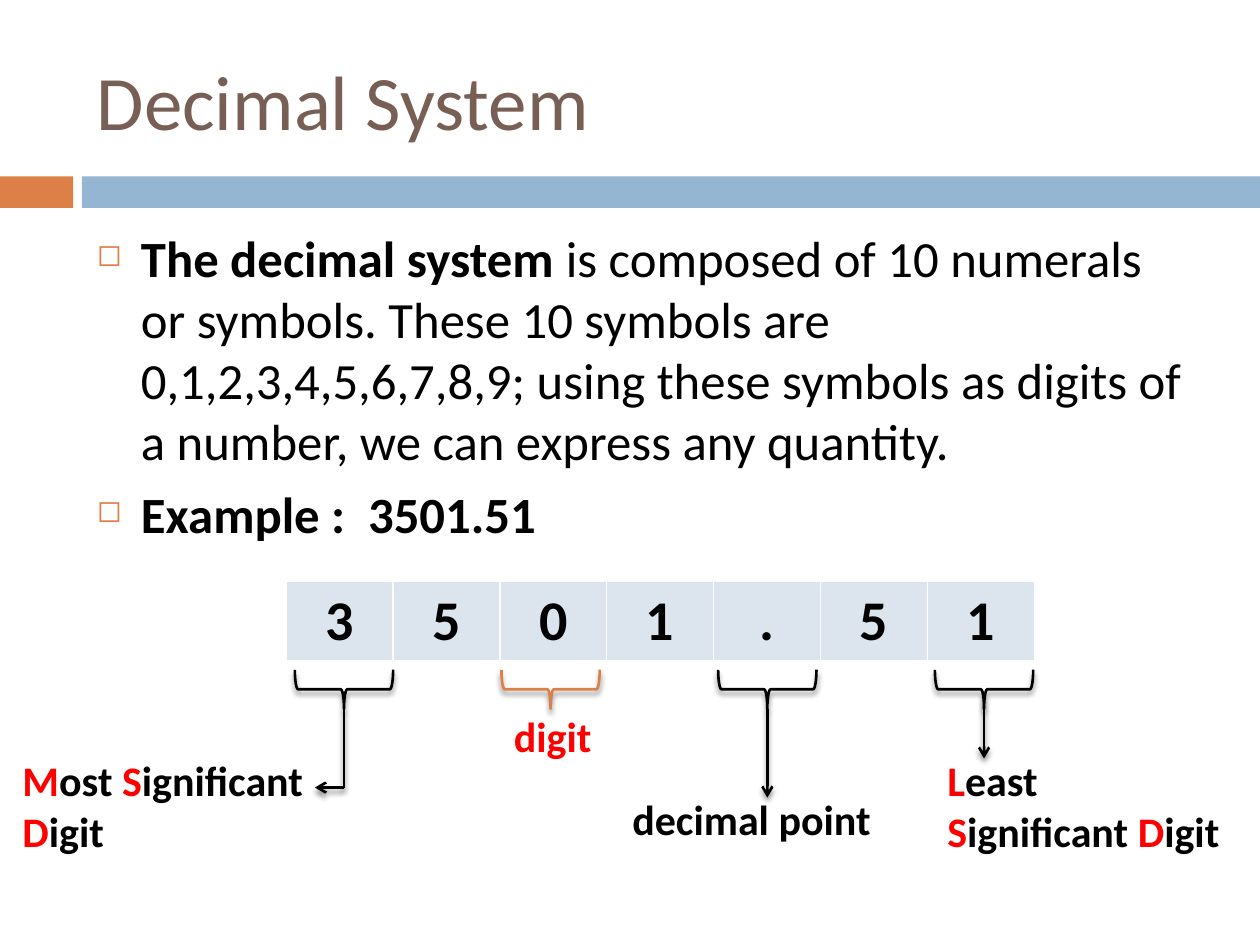
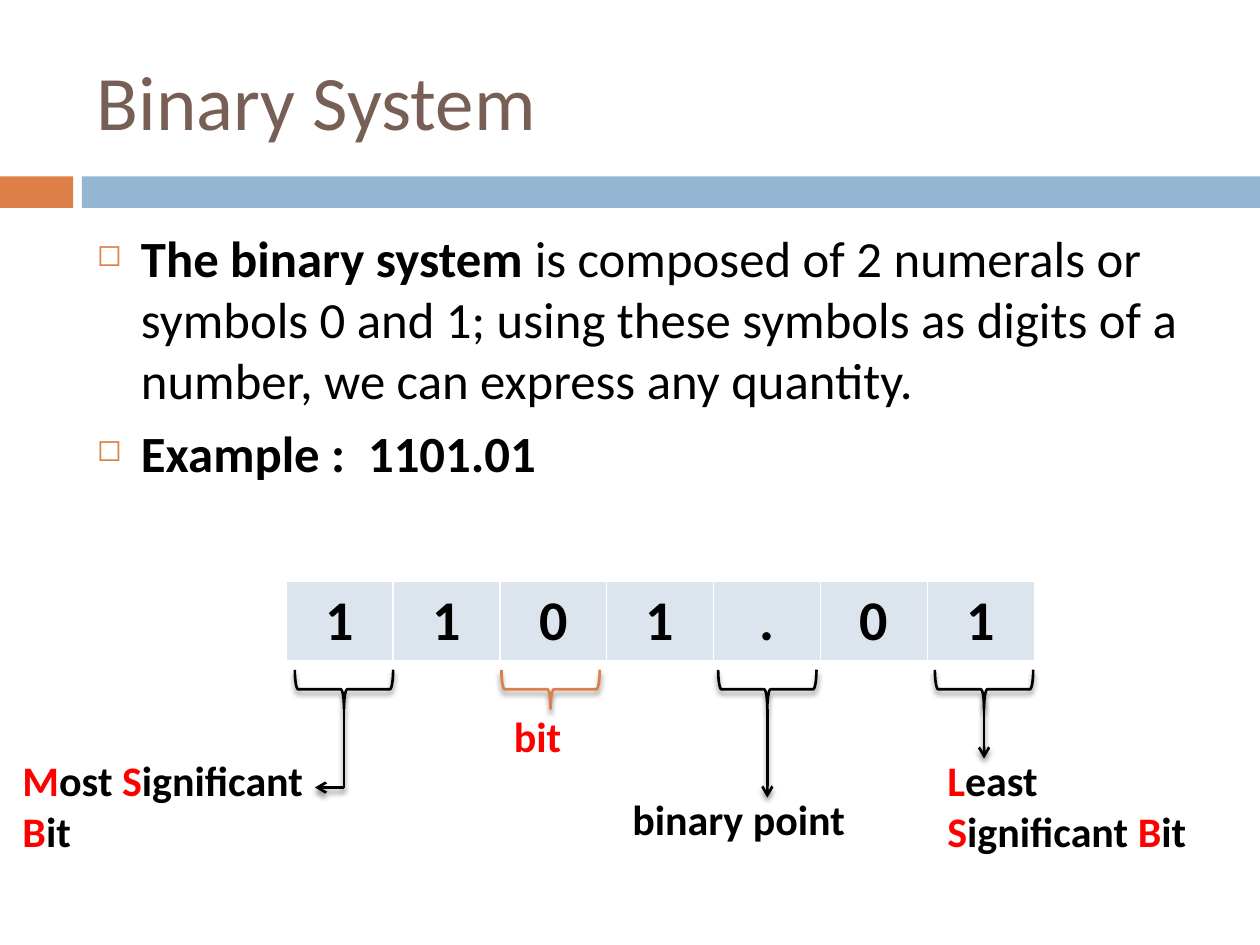
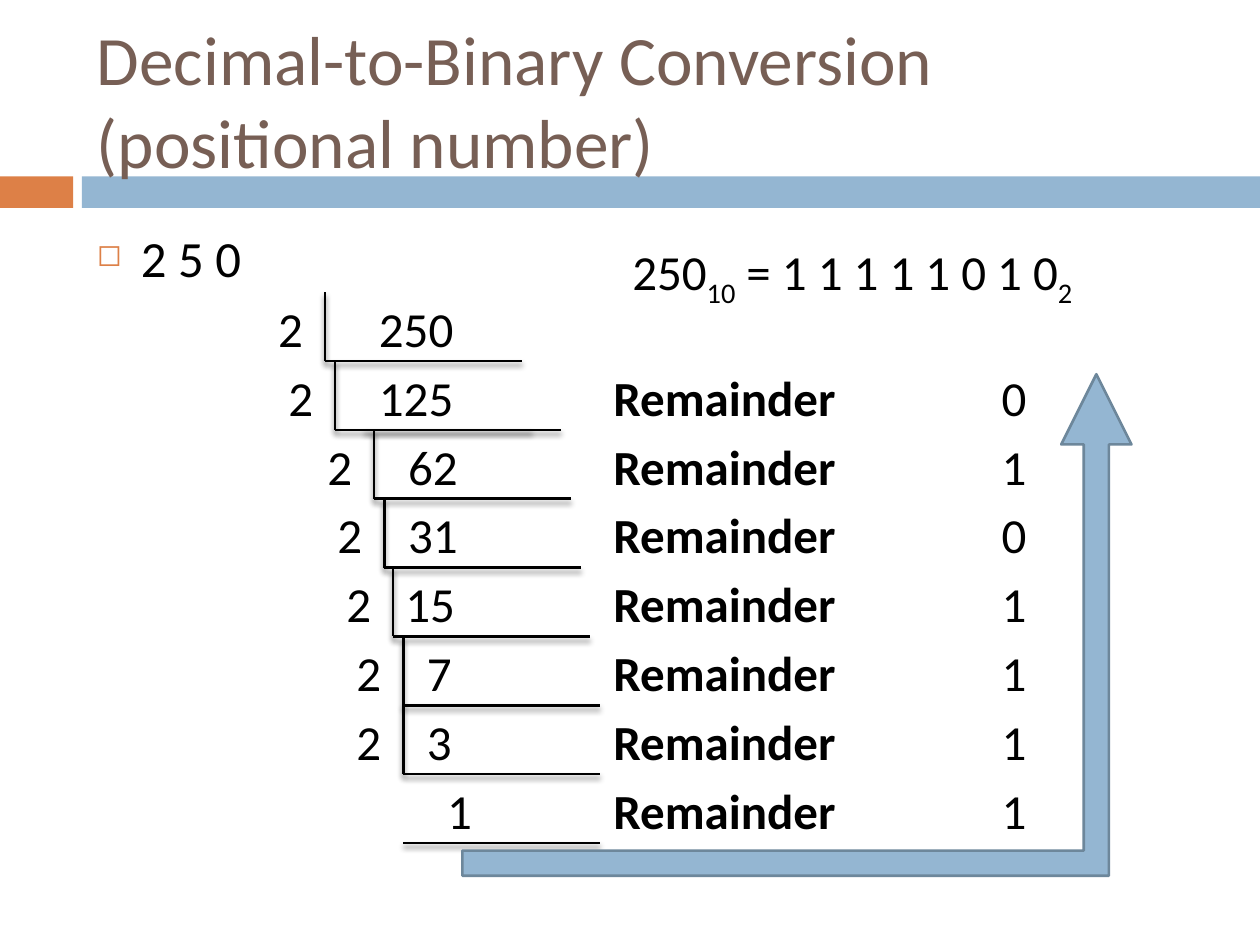
from lxml import etree
from pptx import Presentation
from pptx.dml.color import RGBColor
from pptx.enum.shapes import MSO_CONNECTOR, MSO_SHAPE
from pptx.enum.text import MSO_ANCHOR, PP_ALIGN
from pptx.oxml import parse_xml
from pptx.oxml.ns import nsdecls, qn
from pptx.util import Inches, Pt

# Shared style
FONT = "Calibri"
ORANGE = RGBColor(0xDD, 0x80, 0x47)
BLUE = RGBColor(0x94, 0xB6, 0xD2)
BLUE_EDGE = RGBColor(0x6D, 0x87, 0x9B)
BROWN = RGBColor(0x77, 0x5F, 0x55)
PALE = RGBColor(0xDC, 0xE5, 0xEE)
BLACK = RGBColor(0, 0, 0)
RED = RGBColor(0xFF, 0, 0)
WHITE = RGBColor(0xFF, 0xFF, 0xFF)
BOLD = {"bold": True}
LABEL = {"size": 24, "bold": True}
BANDS = [((0, 1.4, 0.58, 0.25), ORANGE), ((0.65, 1.4, 9.35, 0.25), BLUE)]
TITLE_BOX = (0.67, 0.25, 8.92, 1.08)
BODY_BOX = (0.67, 1.75, 8.92, 4.92)

# Content: number systems
SYSTEMS = [
    {"title": "Decimal System",
     "body": [[("The decimal system ", BOLD),
               ("is composed of 10 numerals or symbols. These 10 symbols are "
                "0,1,2,3,4,5,6,7,8,9; using these symbols as digits of a "
                "number, we can express any quantity.", {})],
              [("Example :  3501.51", BOLD)]],
     "number": "3501.51", "unit": "digit", "point": "decimal point",
     "most": ["Most Significant Digit"], "least": ["Least Significant Digit"]},
    {"title": "Binary System",
     "body": [[("The binary system ", BOLD),
               ("is composed of 2 numerals or symbols 0 and 1; using these "
                "symbols as digits of a number, we can express any quantity.",
                {})],
              [("Example :  1101.01", BOLD)]],
     "number": "1101.01", "unit": "bit", "point": "binary point",
     "most": ["Most Significant", "Bit"], "least": ["Least Significant Bit"]},
]
BRACES = [(2.73, BLACK), (4.37, ORANGE), (6.09, BLACK), (7.81, BLACK)]
POINTERS = [  # start, end, has arrowhead
    ((2.73, 5.63), (2.73, 6.25), False),
    ((2.73, 6.25), (2.5, 6.25), True),
    ((6.09, 5.63), (6.09, 6.33), True),
    ((7.81, 5.55), (7.81, 6.02), True),
]

# Content: repeated division
DIVISION_TITLE = "Decimal-to-Binary Conversion (positional number)"
DIVISION_BODY = [[("2 5 0", {})]]
SUB = {"baseline": -25000}
RESULT = [("250", {}), ("10", SUB), (" = 1 1 1 1 1 0 1 0", {}), ("2", SUB)]
DIVISION = [  # quotient, its left, left of the bar, remainder
    ("250", 2.91, 2.58, None),
    ("125", 2.91, 2.66, "0"),
    ("62", 3.14, 2.97, "1"),
    ("31", 3.14, 3.05, "0"),
    ("15", 3.12, 3.12, "1"),
    ("7", 3.29, 3.2, "1"),
    ("3", 3.29, 3.2, "1"),
    ("1", 3.45, 3.2, "1"),
]
LADDER_TOP, LADDER_BOTTOM, RULE_W = 2.32, 6.69, 1.56


def add_shadow(sp):
    spPr = sp._element.spPr
    for old in spPr.findall(qn("a:effectLst")):
        spPr.remove(old)
    spPr.append(parse_xml(
        f'<a:effectLst {nsdecls("a")}><a:outerShdw blurRad="38100" '
        'dist="30480" dir="5400000" rotWithShape="0"><a:srgbClr val="000000">'
        '<a:alpha val="45000"/></a:srgbClr></a:outerShdw></a:effectLst>'))


def add_shape(s, kind, box, fill=None, line=None):
    sp = s.shapes.add_shape(kind, *map(Inches, box))
    sp.shadow.inherit = False
    if fill is None:
        sp.fill.background()
    else:
        sp.fill.solid()
        sp.fill.fore_color.rgb = fill
    if line is None:
        sp.line.fill.background()
    else:
        sp.line.color.rgb = line
        sp.line.width = Pt(1.5)
    return sp


def add_line(s, start, end, arrow=False):
    ln = s.shapes.add_connector(MSO_CONNECTOR.STRAIGHT,
                                *map(Inches, start + end))
    ln.line.color.rgb = BLACK
    ln.line.width = Pt(1.5)
    if arrow:
        etree.SubElement(ln.line._get_or_add_ln(), qn("a:tailEnd"),
                         type="arrow")
    add_shadow(ln)


def add_run(p, text, size=28, color=BLACK, bold=False, baseline=None):
    r = p.add_run()
    r.text = text
    for name, value in {"name": FONT, "size": Pt(size), "bold": bold}.items():
        setattr(r.font, name, value)
    r.font.color.rgb = color
    if baseline:
        r.font._element.set("baseline", str(baseline))


def add_text(s, box, paragraphs, anchor=MSO_ANCHOR.TOP, **base):
    """Each paragraph is a list of (text, format) runs."""
    tf = s.shapes.add_textbox(*map(Inches, box)).text_frame
    tf.word_wrap = True
    tf.vertical_anchor = anchor
    for i, runs in enumerate(paragraphs):
        p = tf.paragraphs[0] if i == 0 else tf.add_paragraph()
        for text, fmt in runs:
            add_run(p, text, **{**base, **fmt})
    return tf


def add_bullet(p):
    p.space_before = Pt(7)
    pPr = p._p.get_or_add_pPr()
    pPr.set("marL", str(Inches(0.35)))
    pPr.set("indent", str(-Inches(0.35)))
    color = etree.SubElement(pPr, qn("a:buClr"))
    etree.SubElement(color, qn("a:srgbClr"), val=str(ORANGE))
    etree.SubElement(pPr, qn("a:buSzPct"), val="60000")
    etree.SubElement(pPr, qn("a:buChar"), char="◻")


def add_slide(prs, title, body, title_size=44):
    s = prs.slides.add_slide(prs.slide_layouts[6])
    for box, color in BANDS:
        add_shape(s, MSO_SHAPE.RECTANGLE, box, fill=color)
    add_text(s, TITLE_BOX, [[(title, {})]], MSO_ANCHOR.MIDDLE,
             size=title_size, color=BROWN)
    for p in add_text(s, BODY_BOX, body, size=29).paragraphs:
        add_bullet(p)
    return s


def add_digits(s, number):
    table = s.shapes.add_table(1, len(number), *map(
        Inches, (2.27, 4.61, 5.94, 0.63))).table
    for i, digit in enumerate(number):
        cell = table.cell(0, i)
        cell.fill.solid()
        cell.fill.fore_color.rgb = PALE
        p = cell.text_frame.paragraphs[0]
        p.alignment = PP_ALIGN.CENTER
        add_run(p, digit, size=32, bold=True)
        tcPr = cell._tc.get_or_add_tcPr()
        for n, side in enumerate(("lnL", "lnR", "lnT", "lnB")):
            tcPr.insert(n, parse_xml(
                f'<a:{side} {nsdecls("a")} w="12700"><a:solidFill>'
                f'<a:srgbClr val="{WHITE}"/></a:solidFill></a:{side}>'))


def red_initials(lines):
    paragraphs = []
    for line in lines:
        words = line.split()
        runs = []
        for i, word in enumerate(words):
            gap = " " if i < len(words) - 1 else ""
            runs += [(word[0], {"color": RED}), (word[1:] + gap, {})]
        paragraphs.append(runs)
    return paragraphs


def build_system(prs, system):
    s = add_slide(prs, system["title"], system["body"])
    add_digits(s, system["number"])
    for center, color in BRACES:
        brace = add_shape(s, MSO_SHAPE.LEFT_BRACE,
                          (center - 0.155, 5.08, 0.31, 0.78), line=color)
        brace.rotation = 270
        add_shadow(brace)
    for pointer in POINTERS:
        add_line(s, *pointer)
    add_text(s, (3.98, 5.59, 1.02, 0.5), [[(system["unit"], {})]],
             color=RED, **LABEL)
    add_text(s, (4.92, 6.25, 2.58, 0.5), [[(system["point"], {})]], **LABEL)
    add_text(s, (0.08, 5.94, 2.89, 0.91), red_initials(system["most"]),
             **LABEL)
    add_text(s, (7.42, 5.94, 2.42, 0.91), red_initials(system["least"]),
             **LABEL)


def build_division(prs):
    s = add_slide(prs, DIVISION_TITLE, DIVISION_BODY, title_size=39.6)
    pitch = (LADDER_BOTTOM - LADDER_TOP) / len(DIVISION)
    for i, (quotient, left, bar, remainder) in enumerate(DIVISION):
        top = LADDER_TOP + i * pitch
        bottom = top + pitch
        add_line(s, (bar, bottom), (bar + RULE_W, bottom))
        add_text(s, (left, top, 1.17, 0.57), [[(quotient, {})]])
        if i < len(DIVISION) - 1:  # the last quotient is not divided
            add_line(s, (bar, top), (bar, bottom))
            add_text(s, (bar - 0.47, top, 0.47, 0.57), [[("2", {})]])
        if remainder:
            tf = add_text(s, (4.77, top, 3.75, 0.57),
                          [[("Remainder", BOLD), ("\t" + remainder, {})]])
            pPr = tf.paragraphs[0]._p.get_or_add_pPr()
            tabs = etree.SubElement(pPr, qn("a:tabLst"))
            etree.SubElement(tabs, qn("a:tab"), pos=str(Inches(3.08)),
                             algn="l")
    # Second rule under 125
    second_y = LADDER_TOP + 2 * pitch
    add_line(s, (2.89, second_y), (2.89 + RULE_W, second_y))
    # Reading direction and result
    arrow = add_shape(s, MSO_SHAPE.BENT_UP_ARROW, (3.67, 2.97, 5.31, 3.98),
                      fill=BLUE, line=BLUE_EDGE)
    for i, value in enumerate((0.05, 0.07, 0.14)):
        arrow.adjustments[i] = value
    add_text(s, (4.92, 1.87, 4.69, 0.57), [RESULT])


def main():
    prs = Presentation()
    prs.slide_width, prs.slide_height = Inches(10), Inches(7.5)
    for system in SYSTEMS:
        build_system(prs, system)
    build_division(prs)
    prs.save("out.pptx")


if __name__ == "__main__":
    main()
